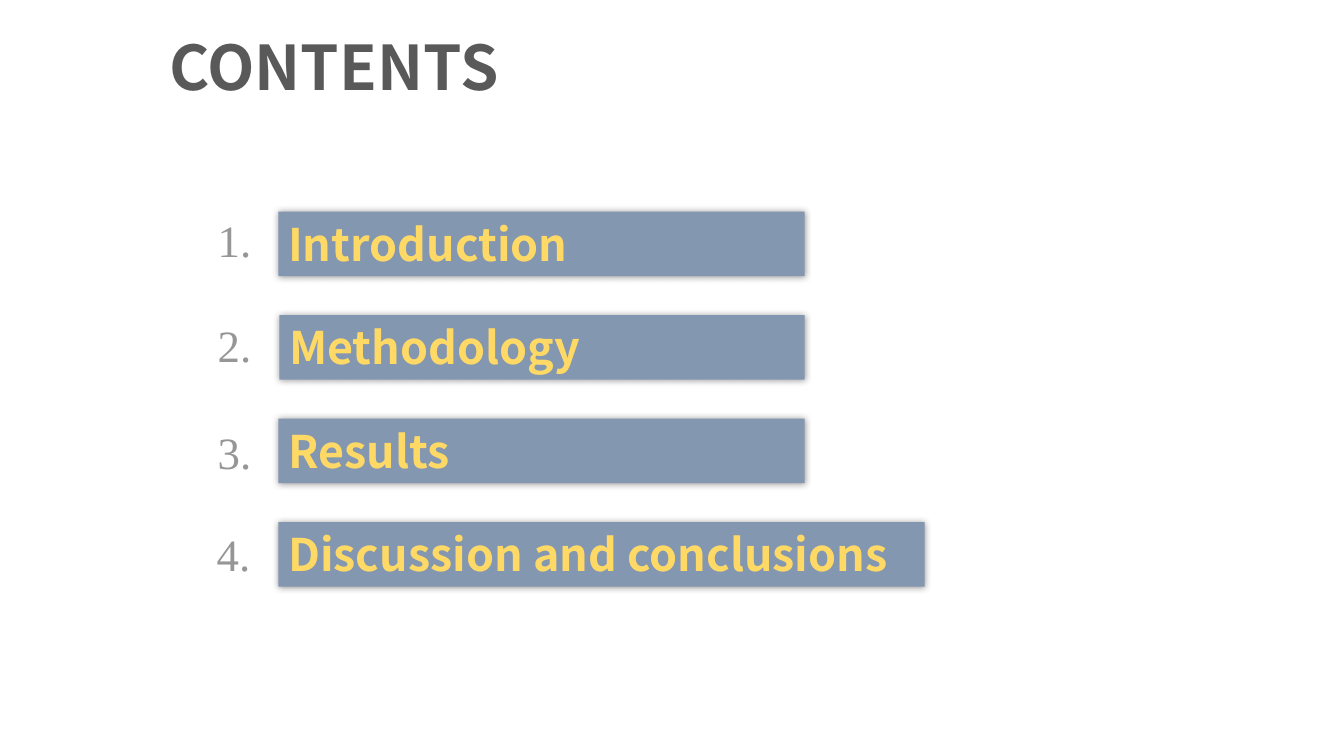
from lxml import etree
from pptx import Presentation
from pptx.dml.color import RGBColor
from pptx.enum.shapes import MSO_SHAPE
from pptx.enum.text import MSO_ANCHOR, PP_ALIGN
from pptx.oxml import parse_xml
from pptx.oxml.ns import nsdecls, qn
from pptx.util import Inches, Pt

BAR_BLUE = RGBColor(0x84, 0x97, 0xB0)
LABEL_YELLOW = RGBColor(0xFF, 0xD9, 0x66)
NUMBER_GRAY = RGBColor(0x96, 0x96, 0x96)
TITLE_GRAY = RGBColor(0x59, 0x59, 0x59)

TITLE_FONT = {"name": "Noto Sans CJK SC", "size": Pt(44), "bold": True}
LABEL_FONT = {"name": "Noto Sans CJK SC", "size": Pt(32), "bold": True}
NUMBER_FONT = {"name": "Times New Roman", "size": Pt(32), "bold": False}

SHADOW_XML = (
    f'<a:outerShdw {nsdecls("a")} blurRad="{Pt(5)}" dist="0" dir="0" algn="ctr" rotWithShape="0">'
    '<a:srgbClr val="000000"><a:alpha val="40000"/></a:srgbClr></a:outerShdw>'
)


def write_text(shape, text, font_values, color, anchor=MSO_ANCHOR.TOP):
    frame = shape.text_frame
    frame.word_wrap = True
    frame.vertical_anchor = anchor
    paragraph = frame.paragraphs[0]
    paragraph.alignment = PP_ALIGN.LEFT
    run = paragraph.add_run()
    run.text = text
    for attribute, value in font_values.items():
        setattr(run.font, attribute, value)
    run.font.color.rgb = color
    # Same typeface for East Asian text
    typeface = etree.SubElement(run.font._element, qn("a:ea"))
    typeface.set("typeface", font_values["name"])


presentation = Presentation()
presentation.slide_width = Inches(13.33)
presentation.slide_height = Inches(7.5)
slide = presentation.slides.add_slide(presentation.slide_layouts[5])

# Title
title = slide.shapes.title
title.left, title.top = Inches(1.58), Inches(0.19)
title.width, title.height = Inches(3.96), Inches(0.92)
write_text(title, "CONTENTS", TITLE_FONT, TITLE_GRAY, MSO_ANCHOR.MIDDLE)

# Contents: label, bar left and width, number left and top
ENTRIES = [
    ("Introduction", 2.76, 5.22, 2.06, 2.06),
    ("Methodology", 2.77, 5.21, 2.06, 3.1),
    ("Results", 2.76, 5.22, 2.06, 4.16),
    ("Discussion and conclusions", 2.76, 6.41, 2.05, 5.18),
]
FIRST_BAR_TOP, LAST_BAR_TOP = 2.1, 5.18
ROW_STEP = (LAST_BAR_TOP - FIRST_BAR_TOP) / (len(ENTRIES) - 1)
ROW_HEIGHT = Inches(0.64)

for index, (label, bar_left, bar_width, number_left, number_top) in enumerate(ENTRIES):
    # Shadowed bar
    bar_top = FIRST_BAR_TOP + index * ROW_STEP
    bar = slide.shapes.add_shape(
        MSO_SHAPE.RECTANGLE, Inches(bar_left), Inches(bar_top), Inches(bar_width), ROW_HEIGHT
    )
    bar.fill.solid()
    bar.fill.fore_color.rgb = BAR_BLUE
    bar.line.fill.background()
    bar.shadow.inherit = False
    bar._element.spPr.find(qn("a:effectLst")).append(parse_xml(SHADOW_XML))
    write_text(bar, label, LABEL_FONT, LABEL_YELLOW)

    # Number beside the bar
    number = slide.shapes.add_textbox(
        Inches(number_left), Inches(number_top), Inches(1.28), ROW_HEIGHT
    )
    write_text(number, f"{index + 1}.", NUMBER_FONT, NUMBER_GRAY)

presentation.save("out.pptx")
